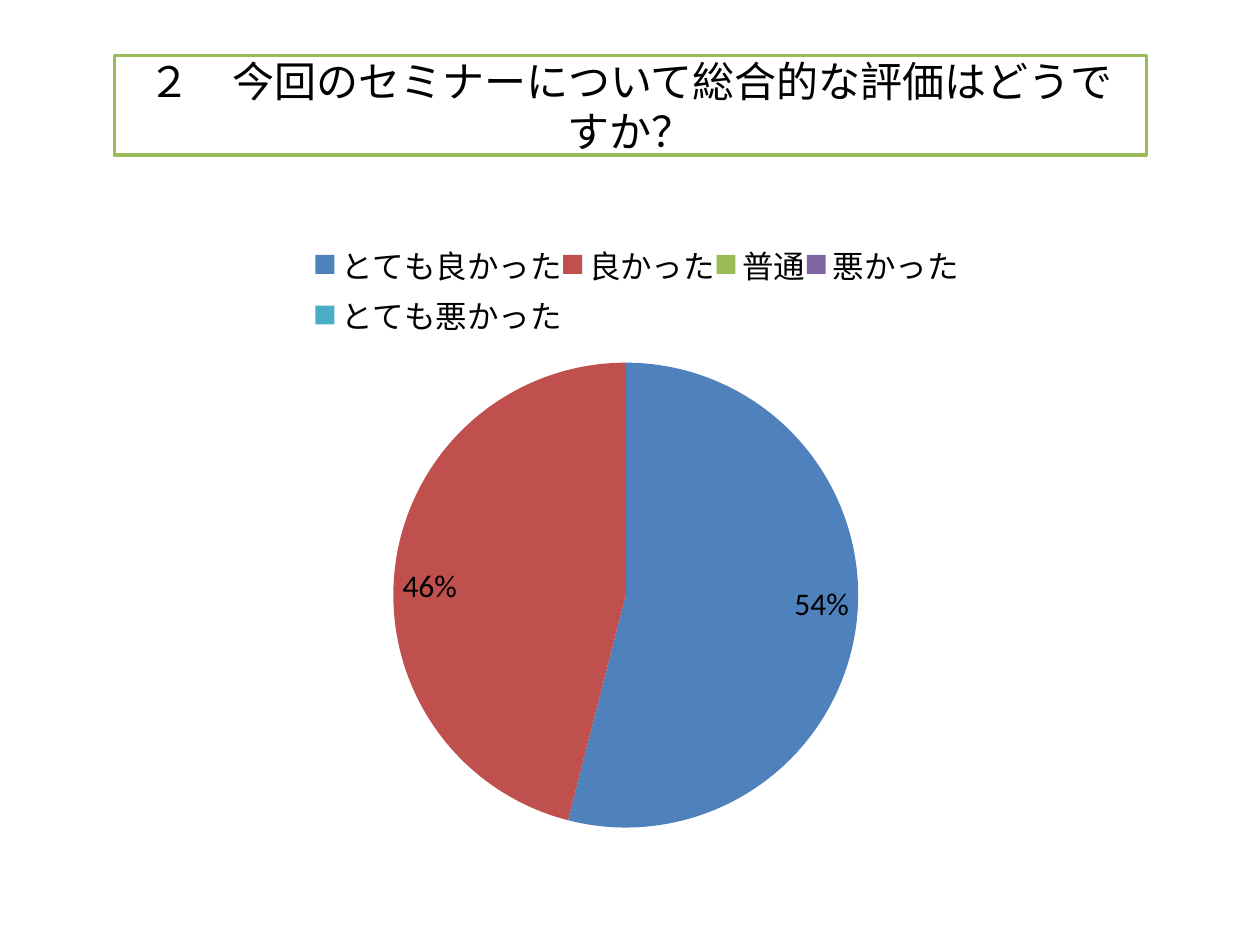
from dataclasses import dataclass

from lxml import etree
from pptx import Presentation
from pptx.chart.data import CategoryChartData
from pptx.dml.color import RGBColor
from pptx.enum.chart import XL_CHART_TYPE, XL_LABEL_POSITION, XL_LEGEND_POSITION
from pptx.enum.text import MSO_ANCHOR, PP_ALIGN
from pptx.oxml.ns import qn
from pptx.util import Cm, Pt

PIE = XL_CHART_TYPE.PIE
TOP = XL_LEGEND_POSITION.TOP
INSIDE = XL_LABEL_POSITION.INSIDE_END
MIDDLE = MSO_ANCHOR.MIDDLE
CENTER = PP_ALIGN.CENTER


@dataclass(frozen=True)
class Theme:
    """Colours, font and type sizes of the slide."""
    font: str = "Calibri"
    ink: str = "000000"
    paper: str = "FFFFFF"
    frame: str = "9BBB59"
    slices: tuple = ("4F81BD", "C0504D", "9BBB59", "8064A2", "4BACC6")
    head: int = 24
    body: int = 18
    edge: int = 2


class Deck:
    """Draws elements on the current slide in one style."""

    def __init__(self, theme):
        """Open a deck with one title slide."""
        self.theme = theme
        self.deck = Presentation()
        self.deck.slide_width, self.deck.slide_height = Cm(25.4), Cm(19.05)
        self.slide = self.deck.slides.add_slide(self.deck.slide_layouts[5])

    def format(self, item, values):
        """Set each named value on an item."""
        for name, value in values.items():
            setattr(item, name, value)

    def style(self, font, size):
        """Give a font the theme look."""
        self.format(font, {"name": self.theme.font, "size": Pt(size), "bold": False})
        font.color.rgb = RGBColor.from_string(self.theme.ink)

    def paint(self, fill, tint):
        """Fill with a solid colour."""
        fill.solid()
        fill.fore_color.rgb = RGBColor.from_string(tint)

    def title(self, text, left, top, width, height):
        """Place the framed title."""
        box = self.slide.shapes.title
        self.format(box, {"left": Cm(left), "top": Cm(top),
                          "width": Cm(width), "height": Cm(height)})
        self.paint(box.fill, self.theme.paper)
        self.paint(box.line.fill, self.theme.frame)
        box.line.width = Pt(self.theme.edge)
        self.format(box.text_frame, {"text": text, "word_wrap": True,
                                     "vertical_anchor": MIDDLE})
        line = box.text_frame.paragraphs[0]
        line.alignment = CENTER
        self.style(line.runs[0].font, self.theme.head)

    def layout(self, parent, index, area, inner=False):
        """Fix a chart part to fractions of the chart area."""
        for old in parent.findall(qn("c:layout")):
            parent.remove(old)
        node = etree.Element(qn("c:layout"))
        manual = etree.SubElement(node, qn("c:manualLayout"))
        rules = {"layoutTarget": "inner"} if inner else {}
        rules |= {"xMode": "edge", "yMode": "edge"}
        rules |= dict(zip("xywh", area))
        for name, value in rules.items():
            etree.SubElement(manual, qn(f"c:{name}")).set("val", str(value))
        parent.insert(index, node)

    def pie(self, name, rows, left, top, width, height):
        """Add a pie with percent labels and a legend on top."""
        data = CategoryChartData()
        data.categories = list(rows)
        data.add_series(name, list(rows.values()))
        chart = self.slide.shapes.add_chart(
            PIE, Cm(left), Cm(top), Cm(width), Cm(height), data).chart
        self.format(chart, {"has_title": False, "has_legend": True})
        self.style(chart.font, self.theme.body)
        self.format(chart.legend, {"position": TOP, "include_in_layout": False})
        plot = chart.plots[0]
        self.format(plot, {"vary_by_categories": True, "has_data_labels": True})
        self.format(plot.data_labels, {
            "show_percentage": True, "show_value": False, "position": INSIDE,
            "number_format": "0%;;", "number_format_is_linked": False})
        self.style(plot.data_labels.font, self.theme.body)
        for index, tint in enumerate(self.theme.slices):
            self.paint(plot.series[0].points[index].format.fill, tint)
        root = chart.element.find(qn("c:chart"))
        self.layout(root.find(qn("c:plotArea")), 0, (0.29, 0.22, 0.41, 0.75), True)
        self.layout(root.find(qn("c:legend")), 1, (0.22, 0.02, 0.57, 0.17))


def main():
    """Build and save the survey slide."""
    deck = Deck(Theme())
    deck.title("２　今回のセミナーについて総合的な評価はどうですか？", 2.31, 1.12, 20.8, 2.01)
    votes = {"とても良かった": 54, "良かった": 46, "普通": 0, "悪かった": 0, "とても悪かった": 0}
    deck.pie("Series 1", votes, 1.3, 4.52, 22.86, 12.57)
    deck.deck.save("out.pptx")


if __name__ == "__main__":
    main()
